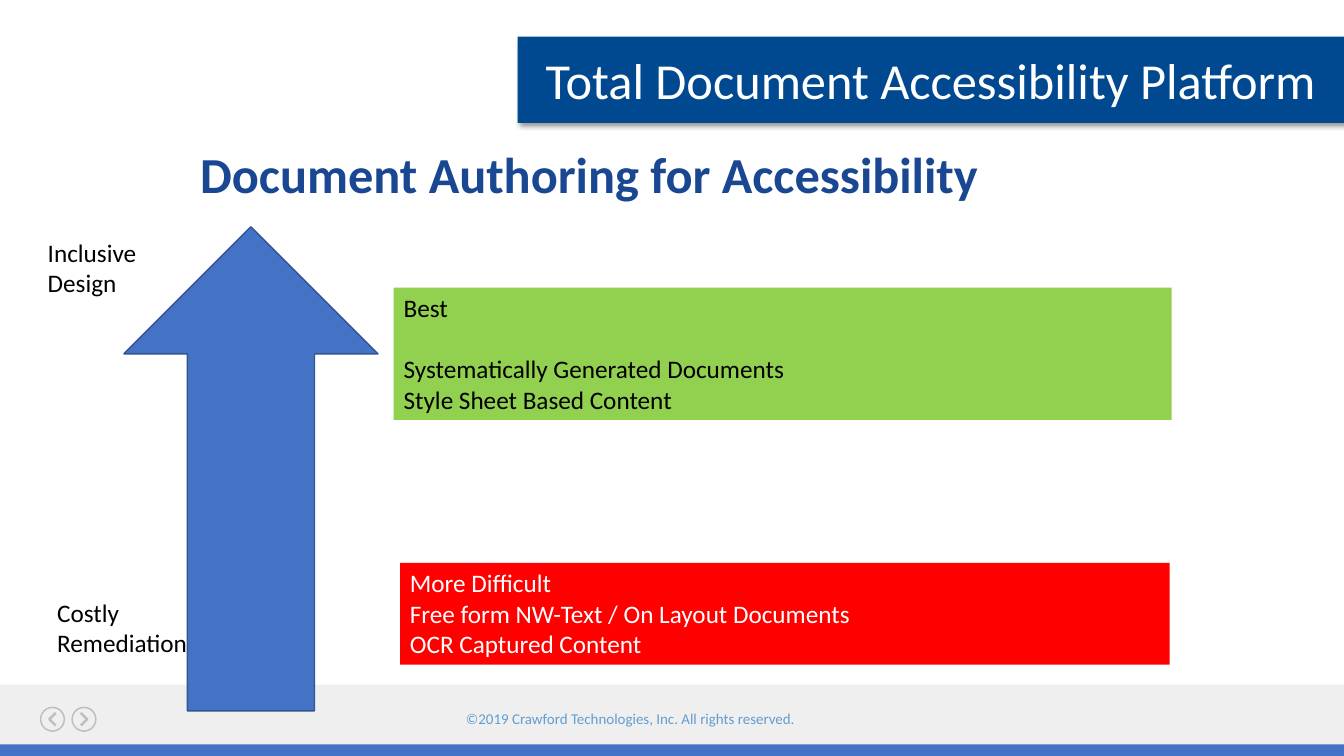
from lxml import etree
from pptx import Presentation
from pptx.dml.color import RGBColor
from pptx.enum.shapes import MSO_SHAPE
from pptx.enum.text import MSO_ANCHOR, PP_ALIGN
from pptx.oxml.ns import qn
from pptx.util import Pt

PX = 9525
FONT = "Calibri"
RECTANGLE, UP_ARROW, DONUT = MSO_SHAPE.RECTANGLE, MSO_SHAPE.UP_ARROW, MSO_SHAPE.DONUT
TOP, MIDDLE = MSO_ANCHOR.TOP, MSO_ANCHOR.MIDDLE
LEFT, CENTER = PP_ALIGN.LEFT, PP_ALIGN.CENTER

WHITE = RGBColor(0xFF, 0xFF, 0xFF)
BLACK = RGBColor(0x00, 0x00, 0x00)
BANNER_BLUE = RGBColor(0x00, 0x49, 0x90)
TITLE_BLUE = RGBColor(0x19, 0x47, 0x92)
ARROW_BLUE = RGBColor(0x44, 0x72, 0xC4)
ARROW_EDGE = RGBColor(0x32, 0x54, 0x91)
FOOTER_BLUE = RGBColor(0x62, 0x9D, 0xD1)
FOOTER_GRAY = RGBColor(0xD9, 0xD9, 0xD9)
ICON_GRAY = RGBColor(0xBF, 0xBF, 0xBF)
GREEN = RGBColor(0x92, 0xD0, 0x50)
RED = RGBColor(0xFF, 0x00, 0x00)

BANNER = "Total Document Accessibility Platform"
TITLE = "Document Authoring for Accessibility"
COPYRIGHT = "©2019 Crawford Technologies, Inc. All rights reserved."
LABELS = [("Inclusive Design", 36, 221), ("Costly Remediation", 45, 564)]
BEST = ["Best", "Systematically Generated Documents", "Style Sheet Based Content"]
DIFFICULT = [
    "More Difficult",
    "Free form NW-Text / On Layout Documents",
    "OCR Captured Content",
]
NAVIGATION = [(38, -1), (68, 1)]
ICON_TOP, ICON_SIZE, CHEVRON_REACH, CHEVRON_RISE = 673, 24, 3, 6

deck = Presentation()
deck.slide_width, deck.slide_height = 1280 * PX, 720 * PX
page = deck.slides.add_slide(deck.slide_layouts[5])


def emu(*lengths):
    return [length * PX for length in lengths]


def add_filled(kind, place, color):
    shape = page.shapes.add_shape(kind, *emu(*place))
    shape.shadow.inherit = False
    shape.fill.solid()
    shape.fill.fore_color.rgb = color
    shape.line.fill.background()
    return shape


def write(box, lines, size, color, align=LEFT, anchor=TOP, bold=False, spacing=1.0):
    frame = box.text_frame
    frame.word_wrap = True
    frame.vertical_anchor = anchor
    frame.text = "\n".join(lines)
    for para in frame.paragraphs:
        para.alignment = align
        para.line_spacing = spacing
        para.font.name = FONT
        para.font.size = Pt(size)
        para.font.bold = bold
        para.font.color.rgb = color


def add_text(place, lines, size, color, **options):
    box = page.shapes.add_textbox(*emu(*place))
    write(box, lines, size, color, **options)


def add_shadow(shape):
    effects = shape._element.spPr.find(qn("a:effectLst"))
    shadow = etree.SubElement(
        effects, qn("a:outerShdw"), blurRad=str(Pt(4)), dist=str(Pt(3)),
        dir="2700000", algn="tl", rotWithShape="0",
    )
    color = etree.SubElement(shadow, qn("a:srgbClr"), val=str(BLACK))
    etree.SubElement(color, qn("a:alpha"), val="40000")


banner = add_filled(RECTANGLE, (493, 35, 787, 82), BANNER_BLUE)
add_shadow(banner)
write(banner, [BANNER], 36, WHITE, align=CENTER, anchor=MIDDLE)

footer = add_filled(RECTANGLE, (0, 652, 1280, 68), FOOTER_GRAY)
footer_color = footer._element.spPr.find(qn("a:solidFill"))[0]
etree.SubElement(footer_color, qn("a:alpha"), val="40000")
add_filled(RECTANGLE, (0, 709, 1280, 11), ARROW_BLUE)
add_text((379, 674, 443, 24), [COPYRIGHT], 10.7, FOOTER_BLUE, align=CENTER, spacing=0.8)

for left, direction in NAVIGATION:
    ring = add_filled(DONUT, (left, ICON_TOP, ICON_SIZE, ICON_SIZE), ICON_GRAY)
    ring.adjustments[0] = 0.06
    center_x, center_y = left + ICON_SIZE // 2, ICON_TOP + ICON_SIZE // 2
    tip = center_x + direction * CHEVRON_REACH
    tail = center_x - direction * CHEVRON_REACH
    outline = page.shapes.build_freeform(tail, center_y - CHEVRON_RISE, scale=PX)
    outline.add_line_segments([(tip, center_y), (tail, center_y + CHEVRON_RISE)], close=False)
    chevron = outline.convert_to_shape()
    chevron.shadow.inherit = False
    chevron.fill.background()
    chevron.line.color.rgb = ICON_GRAY
    chevron.line.width = Pt(1.75)

title = page.shapes.title
title.left, title.top, title.width, title.height = emu(181, 138, 896, 74)
write(title, [TITLE], 36, TITLE_BLUE, bold=True, spacing=0.9)

arrow = add_filled(UP_ARROW, (118, 216, 242, 461), ARROW_BLUE)
arrow.line.color.rgb = ARROW_EDGE
arrow.line.width = Pt(1)

best = add_filled(RECTANGLE, (375, 274, 741, 126), GREEN)
write(best, BEST, 18, BLACK)
best.text_frame.paragraphs[1].space_before = Pt(22)

for label, left, top in LABELS:
    add_text((left, top, 147, 68), [label], 18, BLACK)

difficult = add_filled(RECTANGLE, (381, 536, 733, 97), RED)
write(difficult, DIFFICULT, 18, WHITE)

deck.save("out.pptx")
